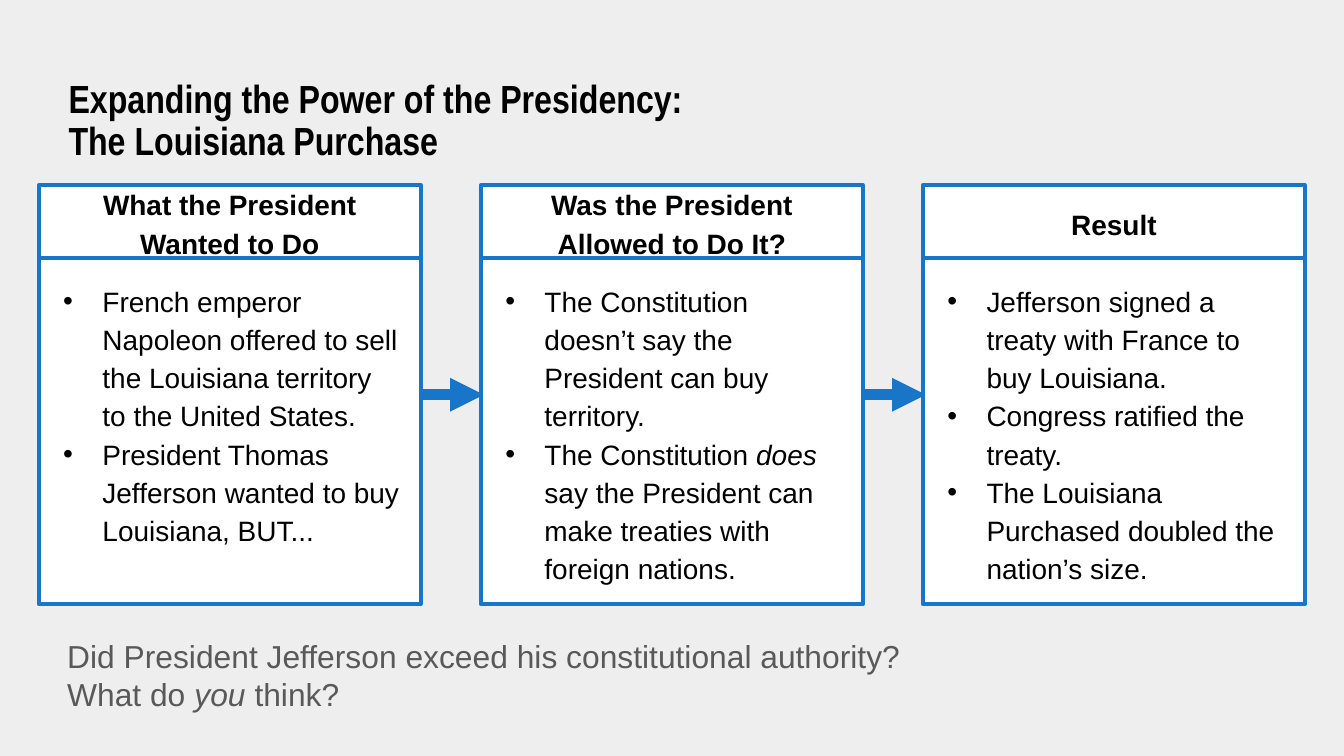
"""Build a slide on how the Louisiana Purchase expanded presidential power."""
from copy import deepcopy
from dataclasses import dataclass

from lxml.etree import SubElement
from pptx import Presentation
from pptx.dml.color import RGBColor
from pptx.enum.shapes import MSO_CONNECTOR, MSO_SHAPE
from pptx.enum.text import MSO_ANCHOR, MSO_AUTO_SIZE, PP_ALIGN
from pptx.oxml.ns import qn
from pptx.util import Pt

TITLE = "Expanding the Power of the Presidency:\vThe Louisiana Purchase"
COLUMNS = [
    ("What the President Wanted to Do", [
        "French emperor Napoleon offered to sell the Louisiana territory to the United States.",
        "President Thomas Jefferson wanted to buy Louisiana, BUT...",
    ]),
    ("Was the President Allowed to Do It?", [
        "The Constitution doesn’t say the President can buy territory.",
        "The Constitution *does* say the President can make treaties with foreign nations.",
    ]),
    ("Result", [
        "Jefferson signed a treaty with France to buy Louisiana.",
        "Congress ratified the treaty.",
        "The Louisiana Purchased doubled the nation’s size.",
    ]),
]
QUESTION = "Did President Jefferson exceed his constitutional authority?\vWhat do *you* think?"


@dataclass(frozen=True)
class Theme:
    background: str = "EEEEEE"
    panel: str = "FFFFFF"
    accent: str = "1875C8"
    ink: str = "000000"
    muted: str = "595959"
    heading_font: str = "Arial Narrow"
    body_font: str = "Arial"
    title_size: int = 21
    column_size: int = 15
    question_size: int = 17


THEME = Theme()
SLIDE_WIDTH, SLIDE_HEIGHT = 720, 405
COLUMN_LEFT, COLUMN_TOP, COLUMN_WIDTH, COLUMN_GAP = 20.9, 99.2, 204.5, 32.3
HEADER_HEIGHT, LIST_HEIGHT = 39, 185.5
ARROW_TOP, ARROW_OVERLAP = 211.5, 1.5
COLUMN_SPACING = 1.14


def color(value):
    return RGBColor.from_string(value)


def write(paragraph, text, size, ink, font=THEME.body_font, bold=False):
    """Fill a paragraph, setting the words between asterisks in italics."""
    opening, *rest = text.split("*")
    paragraph.text = opening
    for index, piece in enumerate(rest):
        run = paragraph.add_run()
        run.text = piece
        run.font.italic = index % 2 == 0
    for run in paragraph.runs:
        run.font.name, run.font.size, run.font.bold = font, Pt(size), bold
        run.font.color.rgb = color(ink)
    for line_break in paragraph._p.findall(qn("a:br")):
        line_break.append(deepcopy(paragraph.runs[0].font._element))


def set_frame(frame, margins, anchor=MSO_ANCHOR.TOP):
    frame.word_wrap = True
    frame.auto_size = MSO_AUTO_SIZE.NONE
    frame.vertical_anchor = anchor
    frame.margin_left, frame.margin_top, frame.margin_right, frame.margin_bottom = map(Pt, margins)


def add_bullet(paragraph):
    properties = paragraph._p.get_or_add_pPr()
    properties.set("marL", str(Pt(22.5)))
    properties.set("indent", str(Pt(-21)))
    bullet_color = SubElement(properties, qn("a:buClr"))
    SubElement(bullet_color, qn("a:srgbClr"), val=THEME.ink)
    SubElement(properties, qn("a:buFont"), typeface=THEME.body_font)
    SubElement(properties, qn("a:buChar"), char="•")


def add_panel(shapes, left, top, height):
    panel = shapes.add_shape(MSO_SHAPE.RECTANGLE, Pt(left), Pt(top), Pt(COLUMN_WIDTH), Pt(height))
    panel.shadow.inherit = False
    panel.fill.solid()
    panel.fill.fore_color.rgb = color(THEME.panel)
    panel.line.color.rgb = color(THEME.accent)
    panel.line.width = Pt(2.25)
    return panel.text_frame


def add_column(slide, left, heading, points):
    shapes = slide.shapes.add_group_shape().shapes
    header = add_panel(shapes, left, COLUMN_TOP, HEADER_HEIGHT)
    set_frame(header, (7.2, 3.6, 7.2, 3.6), MSO_ANCHOR.MIDDLE)
    paragraph = header.paragraphs[0]
    paragraph.alignment, paragraph.line_spacing = PP_ALIGN.CENTER, COLUMN_SPACING
    write(paragraph, heading, THEME.column_size, THEME.ink, bold=True)

    details = add_panel(shapes, left, COLUMN_TOP + HEADER_HEIGHT, LIST_HEIGHT)
    set_frame(details, (11.5, 11.5, 11.5, 5.8))
    for index, point in enumerate(points):
        paragraph = details.add_paragraph() if index else details.paragraphs[0]
        paragraph.alignment, paragraph.line_spacing = PP_ALIGN.LEFT, COLUMN_SPACING
        add_bullet(paragraph)
        write(paragraph, point, THEME.column_size, THEME.ink)


def add_arrow(slide, start):
    end = start + COLUMN_GAP + ARROW_OVERLAP
    arrow = slide.shapes.add_connector(
        MSO_CONNECTOR.STRAIGHT, Pt(start), Pt(ARROW_TOP), Pt(end), Pt(ARROW_TOP))
    arrow.line.color.rgb = color(THEME.accent)
    arrow.line.width = Pt(6)
    SubElement(arrow.line._get_or_add_ln(), qn("a:tailEnd"), type="triangle")
    SubElement(arrow._element.spPr, qn("a:effectLst"))


def main():
    deck = Presentation()
    deck.slide_width, deck.slide_height = Pt(SLIDE_WIDTH), Pt(SLIDE_HEIGHT)
    slide = deck.slides.add_slide(deck.slide_layouts.get_by_name("Title Only"))
    slide.background.fill.solid()
    slide.background.fill.fore_color.rgb = color(THEME.background)

    title = slide.shapes.title
    title.left, title.top, title.width, title.height = map(Pt, (36.7, 42.5, 612, 46))
    set_frame(title.text_frame, (0, 0, 0, 0))
    paragraph = title.text_frame.paragraphs[0]
    paragraph.alignment, paragraph.line_spacing = PP_ALIGN.LEFT, 0.9
    write(paragraph, TITLE, THEME.title_size, THEME.ink, THEME.heading_font, bold=True)

    for index, (heading, points) in enumerate(COLUMNS):
        left = COLUMN_LEFT + index * (COLUMN_WIDTH + COLUMN_GAP)
        add_column(slide, left, heading, points)
        if index < len(COLUMNS) - 1:
            add_arrow(slide, left + COLUMN_WIDTH)

    question = slide.shapes.add_textbox(Pt(36), Pt(340.6), Pt(637), Pt(45.4)).text_frame
    set_frame(question, (0, 0.7, 0, 3.6))
    write(question.paragraphs[0], QUESTION, THEME.question_size, THEME.muted)

    deck.save("out.pptx")


if __name__ == "__main__":
    main()
